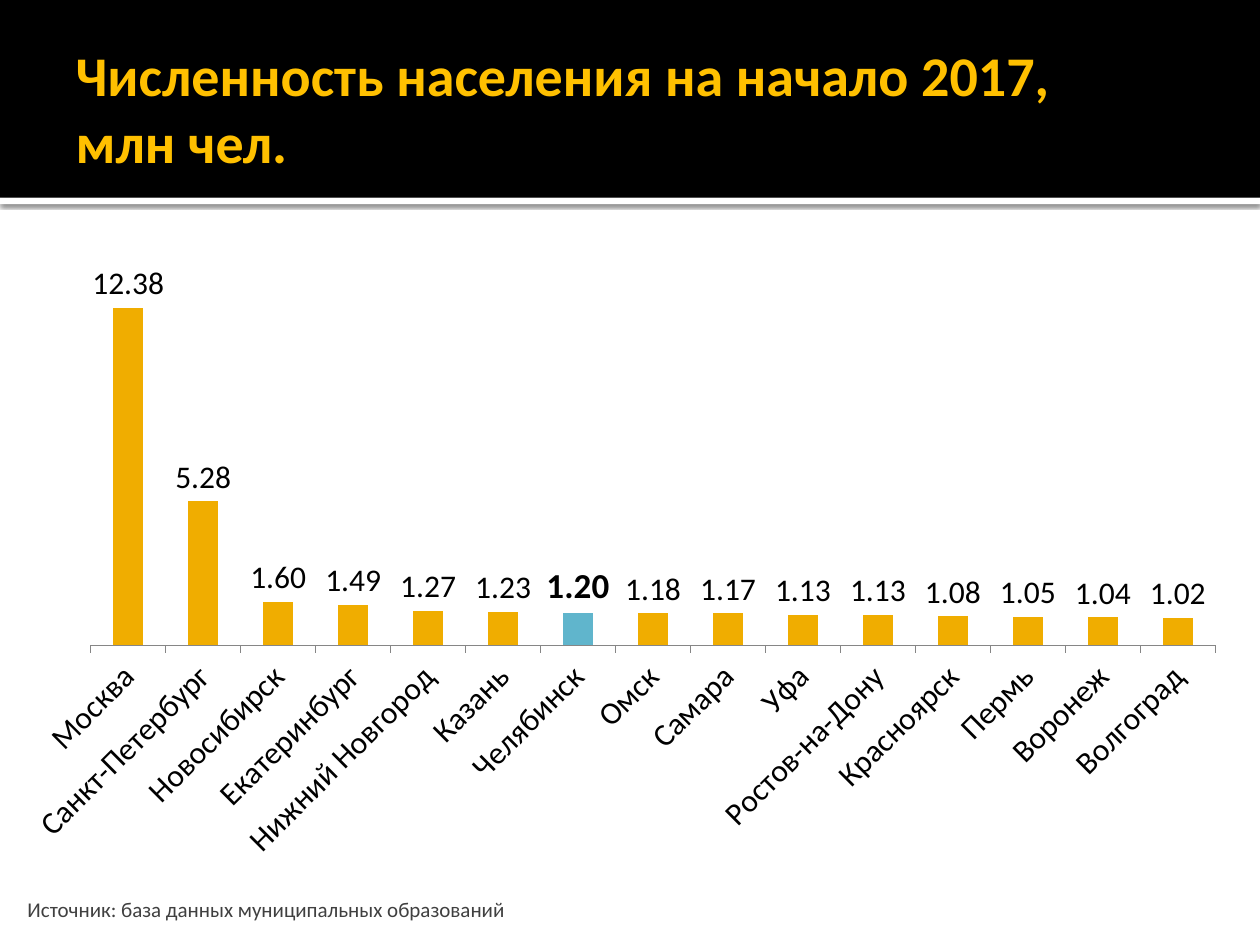
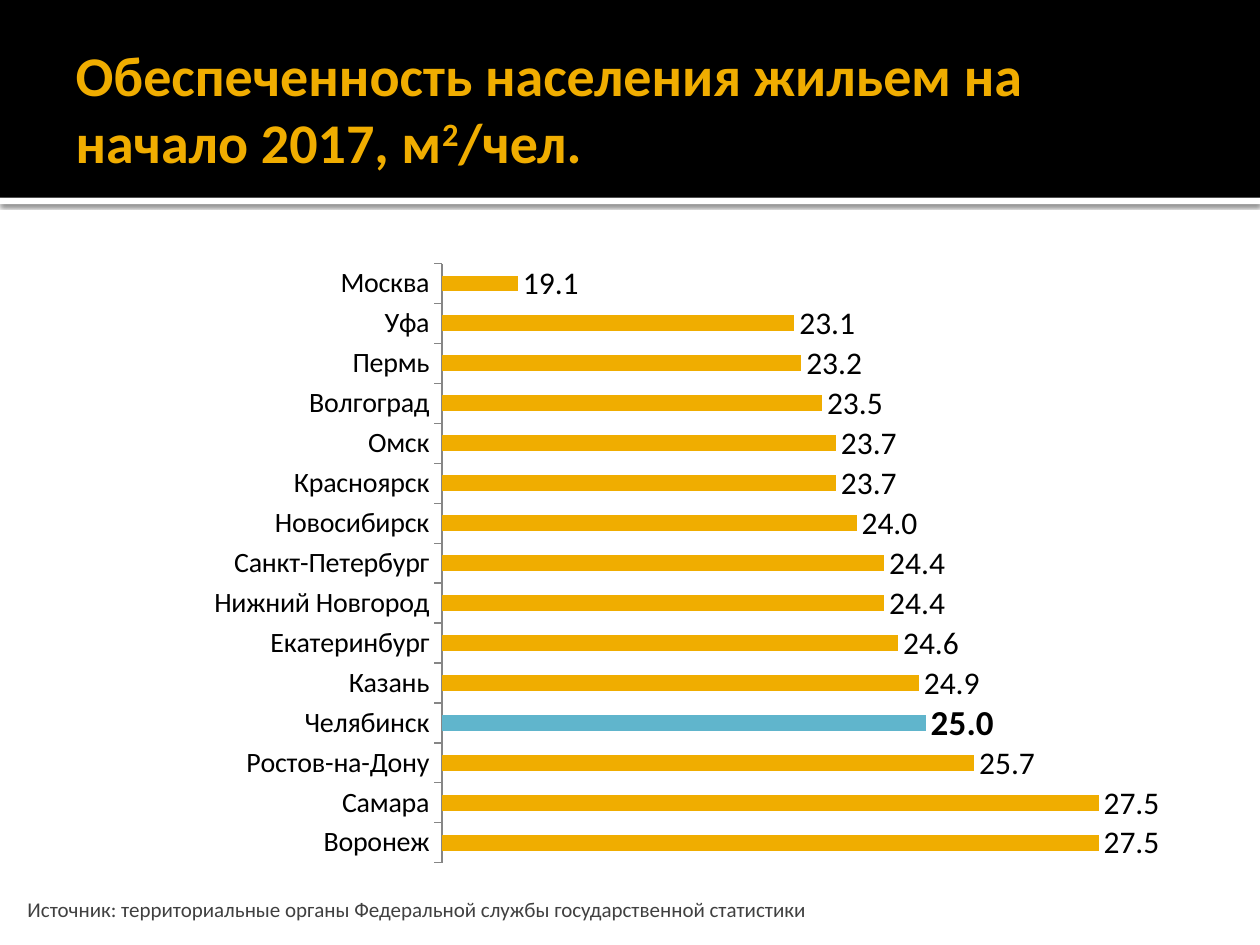
"""Builds two slides that compare large Russian cities by population and housing."""
from lxml.etree import SubElement
from pptx import Presentation
from pptx.chart.data import CategoryChartData
from pptx.dml.color import RGBColor
from pptx.enum.chart import XL_CHART_TYPE as CT, XL_LABEL_POSITION as LP, XL_TICK_MARK as TM
from pptx.enum.shapes import MSO_SHAPE
from pptx.enum.text import MSO_ANCHOR, MSO_AUTO_SIZE, PP_ALIGN
from pptx.oxml import parse_xml
from pptx.oxml.ns import nsdecls, qn
from pptx.util import Inches, Pt

BLACK = RGBColor(0, 0, 0)
WHITE = RGBColor(255, 255, 255)
YELLOW = RGBColor(0xFF, 0xC0, 0x00)
AMBER = RGBColor(0xF0, 0xAD, 0x00)
BLUE = RGBColor(0x60, 0xB5, 0xCC)
AXIS_GREY = RGBColor(0x86, 0x86, 0x86)
SOURCE_GREY = RGBColor(0x40, 0x40, 0x40)
FONT = "Calibri"
FOCUS_CITY = "Челябинск"

POPULATION = {
    "Москва": 12.38, "Санкт-Петербург": 5.28, "Новосибирск": 1.60,
    "Екатеринбург": 1.49, "Нижний Новгород": 1.27, "Казань": 1.23,
    "Челябинск": 1.20, "Омск": 1.18, "Самара": 1.17, "Уфа": 1.13,
    "Ростов-на-Дону": 1.13, "Красноярск": 1.08, "Пермь": 1.05,
    "Воронеж": 1.04, "Волгоград": 1.02,
}
HOUSING = {
    "Воронеж": 27.5, "Самара": 27.5, "Ростов-на-Дону": 25.7,
    "Челябинск": 25.0, "Казань": 24.9, "Екатеринбург": 24.6,
    "Нижний Новгород": 24.4, "Санкт-Петербург": 24.4, "Новосибирск": 24.0,
    "Красноярск": 23.7, "Омск": 23.7, "Волгоград": 23.5, "Пермь": 23.2,
    "Уфа": 23.1, "Москва": 19.1,
}


class Deck:
    """Holds the shared style and the current slide."""

    def __init__(self):
        self.prs = Presentation()
        self.prs.slide_width, self.prs.slide_height = Inches(10), Inches(7.5)
        self.slide = None

    def new_slide(self):
        self.slide = self.prs.slides.add_slide(self.prs.slide_layouts[5])
        self.band(0, 1.57, BLACK)
        stripe = self.band(1.57, 0.05, WHITE)
        effects = stripe.element.spPr.find(qn("a:effectLst"))
        shadow = SubElement(effects, qn("a:outerShdw"), blurRad=str(Pt(2.5)),
                            dist=str(Pt(0.8)), dir="5400000", algn="t", rotWithShape="0")
        color = SubElement(shadow, qn("a:srgbClr"), val=str(BLACK))
        SubElement(color, qn("a:alpha"), val="60000")

    def band(self, top, height, color):
        sp = self.slide.shapes.add_shape(MSO_SHAPE.RECTANGLE, 0, Inches(top),
                                         self.prs.slide_width, Inches(height))
        sp.fill.solid()
        sp.fill.fore_color.rgb = color
        sp.line.fill.background()
        sp.shadow.inherit = False
        self.slide.shapes.element.insert(2, sp.element)
        return sp

    def style(self, font, size, color, bold=False):
        font.name, font.size, font.bold = FONT, Pt(size), bold
        font.color.rgb = color

    def title(self, width, color, *pieces):
        sp = self.slide.shapes.title
        sp.left, sp.top, sp.width, sp.height = map(Inches, (0.5, 0.17, width, 1.37))
        tf = sp.text_frame
        tf.word_wrap, tf.auto_size = True, MSO_AUTO_SIZE.NONE
        tf.vertical_anchor = MSO_ANCHOR.MIDDLE
        tf.margin_left = Inches(0.1)
        tf.margin_right = tf.margin_top = tf.margin_bottom = Inches(0.05)
        p = tf.paragraphs[0]
        p.text = pieces[0]
        for piece in pieces[1:]:
            p.add_run().text = piece
        p.alignment = PP_ALIGN.LEFT
        self.style(p.font, 32, color, bold=True)
        return p

    def source(self, width, text):
        sp = self.slide.shapes.add_textbox(Inches(0.12), Inches(7.07), Inches(width), Inches(0.3))
        tf = sp.text_frame
        tf.word_wrap, tf.auto_size = True, MSO_AUTO_SIZE.SHAPE_TO_FIT_TEXT
        p = tf.paragraphs[0]
        p.text = text
        self.style(p.font, 12, SOURCE_GREY)

    def chart(self, kind, left, width, values, fmt, limits, plot_box, axis_size=18, rotation=0):
        data = CategoryChartData(number_format=fmt)
        data.categories = list(values)
        data.add_series("Series 1", list(values.values()))
        chart = self.slide.shapes.add_chart(kind, Inches(left), Inches(1.94), Inches(width),
                                            Inches(5.06), data).chart
        chart.has_legend = chart.has_title = False
        self.style(chart.font, 18, BLACK)

        value_axis = chart.value_axis
        value_axis.minimum_scale, value_axis.maximum_scale = limits
        value_axis.has_major_gridlines = value_axis.visible = False
        axis = chart.category_axis
        axis.major_tick_mark, axis.minor_tick_mark = TM.OUTSIDE, TM.NONE
        axis.format.line.color.rgb = AXIS_GREY
        axis.format.line.width = Pt(0.75)
        self.style(axis.tick_labels.font, axis_size, BLACK)

        plot = chart.plots[0]
        plot.gap_width, plot.vary_by_categories = 150, False
        series = plot.series[0]
        series.format.fill.solid()
        series.format.fill.fore_color.rgb = AMBER
        labels = series.data_labels
        labels.show_value, labels.position = True, LP.OUTSIDE_END
        labels.number_format, labels.number_format_is_linked = fmt, False
        self.style(labels.font, 18, BLACK)
        point = series.points[list(values).index(FOCUS_CITY)]
        point.format.fill.solid()
        point.format.fill.fore_color.rgb = BLUE
        self.style(point.data_label.font, 20, BLACK, bold=True)
        point.data_label.position = LP.OUTSIDE_END
        self.arrange(chart, plot_box, rotation)

    def arrange(self, chart, plot_box, rotation):
        area = chart._chartSpace.find(".//" + qn("c:plotArea"))
        for old in area.findall(qn("c:layout")):
            area.remove(old)
        sides = "".join(f'<c:{tag} val="{size}"/>' for tag, size in zip("xywh", plot_box))
        area.insert(0, parse_xml(
            f'<c:layout {nsdecls("c")}><c:manualLayout><c:layoutTarget val="inner"/>'
            f'<c:xMode val="edge"/><c:yMode val="edge"/>{sides}</c:manualLayout></c:layout>'))
        if rotation:
            body = area.find(f'{qn("c:catAx")}/{qn("c:txPr")}/{qn("a:bodyPr")}')
            body.set("rot", str(rotation * 60000))
            body.set("vert", "horz")


def main():
    deck = Deck()

    deck.new_slide()
    deck.title(9.3, YELLOW, "Численность населения на начало 2017, \nмлн чел.")
    deck.chart(CT.COLUMN_CLUSTERED, 0.12, 9.69, POPULATION, "0.00", (0, 14),
               (0.062, 0.03, 0.921, 0.599), rotation=-45)
    deck.source(6.3, "Источник: база данных муниципальных образований")

    deck.new_slide()
    p = deck.title(9, AMBER, "Обеспеченность населения жильем на начало 2017, м", "2", "/чел.")
    p.runs[1].font._element.set("baseline", "30000")
    deck.chart(CT.BAR_CLUSTERED, 1.14, 8.19, HOUSING, "0.0", (18, 28),
               (0.289, 0.03, 0.67, 0.94), axis_size=16)
    deck.source(7.17, "Источник: территориальные органы Федеральной службы "
                      "государственной статистики")

    deck.prs.save("out.pptx")


if __name__ == "__main__":
    main()
